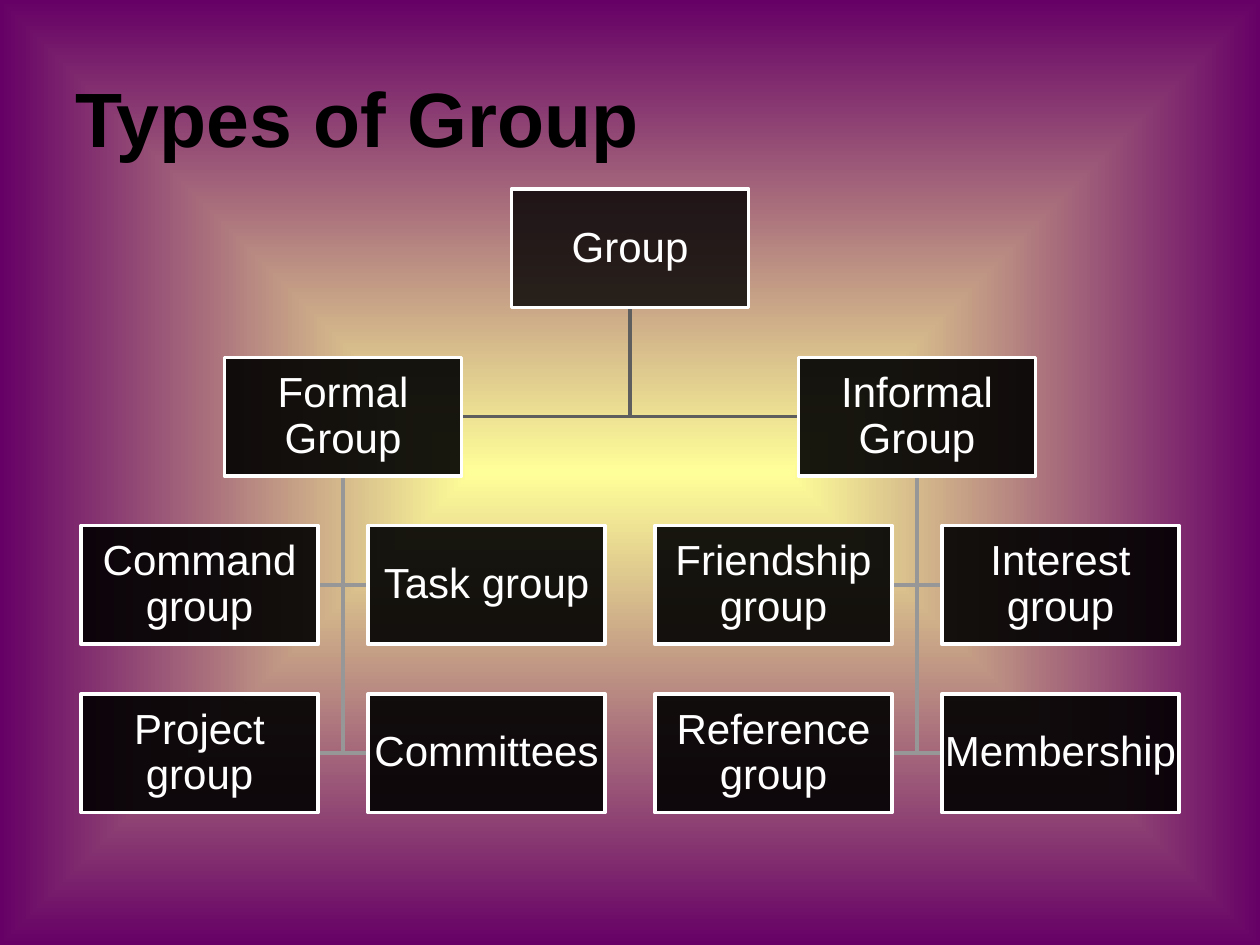
from dataclasses import dataclass

from lxml.etree import SubElement
from pptx import Presentation
from pptx.dml.color import RGBColor
from pptx.enum.shapes import MSO_SHAPE
from pptx.enum.text import MSO_ANCHOR, PP_ALIGN
from pptx.oxml.ns import qn
from pptx.util import Cm, Pt


@dataclass(frozen=True)
class Theme:
    font: str = "Arial"
    title_size: int = 44
    box_size: int = 24
    line_width: int = 2
    center: RGBColor = RGBColor(0xFF, 0xFF, 0x99)
    edge: RGBColor = RGBColor(0x66, 0x00, 0x66)
    dark: RGBColor = RGBColor(0x00, 0x00, 0x00)
    light: RGBColor = RGBColor(0xFF, 0xFF, 0xFF)
    # By level of the tree
    branches: tuple = (RGBColor(0x5E, 0x5E, 0x5E), RGBColor(0x97, 0x97, 0x97))
    opacities: tuple = (80, 90, 90)


@dataclass(frozen=True)
class Box:
    left: float
    top: float
    width: float
    height: float

    @property
    def lengths(self):
        return Cm(self.left), Cm(self.top), Cm(self.width), Cm(self.height)


@dataclass(frozen=True)
class Node:
    label: str
    column: float
    row: int
    level: int
    children: tuple = ()


THEME = Theme()

TREE = Node("Group", 1.5, 0, 0, (
    Node("Formal Group", 0.5, 1, 1, (
        Node("Command group", 0, 2, 2),
        Node("Task group", 1, 2, 2),
        Node("Project group", 0, 3, 2),
        Node("Committees", 1, 3, 2),
    )),
    Node("Informal Group", 2.5, 1, 1, (
        Node("Friendship group", 2, 2, 2),
        Node("Interest group", 3, 2, 2),
        Node("Reference group", 2, 3, 2),
        Node("Membership", 3, 3, 2),
    )),
))


def write_text(paragraph, text, size, color, bold=False):
    run = paragraph.add_run()
    run.text = text
    run.font.name = THEME.font
    run.font.size = Pt(size)
    run.font.bold = bold
    run.font.color.rgb = color


def paint_background(slide):
    fill = slide.background.fill
    fill.gradient()
    for stop, color in zip(fill.gradient_stops, (THEME.center, THEME.edge)):
        stop.color.rgb = color
    # Let the gradient run from the middle to the slide's edges
    gradient = slide.element.find(".//" + qn("a:gradFill"))
    gradient.remove(gradient.find(qn("a:lin")))
    outline = SubElement(gradient, qn("a:path"), path="shape")
    SubElement(outline, qn("a:fillToRect"), l="50000", t="50000", r="50000", b="50000")


def add_title(slide, box, text):
    frame = slide.shapes.add_textbox(*box.lengths).text_frame
    frame.word_wrap = True
    frame.vertical_anchor = MSO_ANCHOR.MIDDLE
    write_text(frame.paragraphs[0], text, THEME.title_size, THEME.dark, bold=True)


def add_branch(slide, parent, child, color):
    """Run down from the parent's bottom, then across to the child's near side."""
    trunk = parent.left + parent.width / 2
    side = child.left if child.left > trunk else child.left + child.width
    middle = child.top + child.height / 2
    builder = slide.shapes.build_freeform(Cm(trunk), Cm(parent.top + parent.height))
    builder.add_line_segments(
        [(Cm(trunk), Cm(middle)), (Cm(side), Cm(middle))], close=False)
    branch = builder.convert_to_shape()
    branch.shadow.inherit = False
    branch.fill.background()
    branch.line.color.rgb = color
    branch.line.width = Pt(THEME.line_width)


def add_node(slide, box, node):
    shape = slide.shapes.add_shape(MSO_SHAPE.RECTANGLE, *box.lengths)
    shape.shadow.inherit = False
    shape.fill.solid()
    shape.fill.fore_color.rgb = THEME.dark
    color = shape.element.spPr.find(qn("a:solidFill")).find(qn("a:srgbClr"))
    SubElement(color, qn("a:alpha"), val=str(THEME.opacities[node.level] * 1000))
    shape.line.color.rgb = THEME.light
    shape.line.width = Pt(THEME.line_width)

    frame = shape.text_frame
    frame.word_wrap = True
    frame.vertical_anchor = MSO_ANCHOR.MIDDLE
    frame.margin_left = frame.margin_right = Cm(0.04)
    frame.margin_top = frame.margin_bottom = Cm(0.04)
    paragraph = frame.paragraphs[0]
    paragraph.alignment = PP_ALIGN.CENTER
    paragraph.line_spacing = 0.9
    write_text(paragraph, node.label, THEME.box_size, THEME.light)


def add_tree(slide, box, root):
    """Four columns and four rows, with the same gap both ways."""
    gap = 1
    width = (box.width - 3 * gap) / 4
    height = (box.height - 3 * gap) / 4

    def place(node):
        return Box(box.left + node.column * (width + gap),
                   box.top + node.row * (height + gap), width, height)

    def walk(node):
        yield node
        for child in node.children:
            yield from walk(child)

    nodes = list(walk(root))
    # Branches lie behind the boxes
    for node in nodes:
        for child in node.children:
            add_branch(slide, place(node), place(child), THEME.branches[node.level])
    for node in nodes:
        add_node(slide, place(node), node)


def main():
    presentation = Presentation()
    presentation.slide_width = Cm(25.4)
    presentation.slide_height = Cm(19.05)
    slide = presentation.slides.add_slide(presentation.slide_layouts[6])
    paint_background(slide)
    add_title(slide, Box(1.27, 0.76, 22.86, 3.18), "Types of Group")
    add_tree(slide, Box(1.63, 3.81, 22.14, 12.57), TREE)
    presentation.save("out.pptx")


if __name__ == "__main__":
    main()
